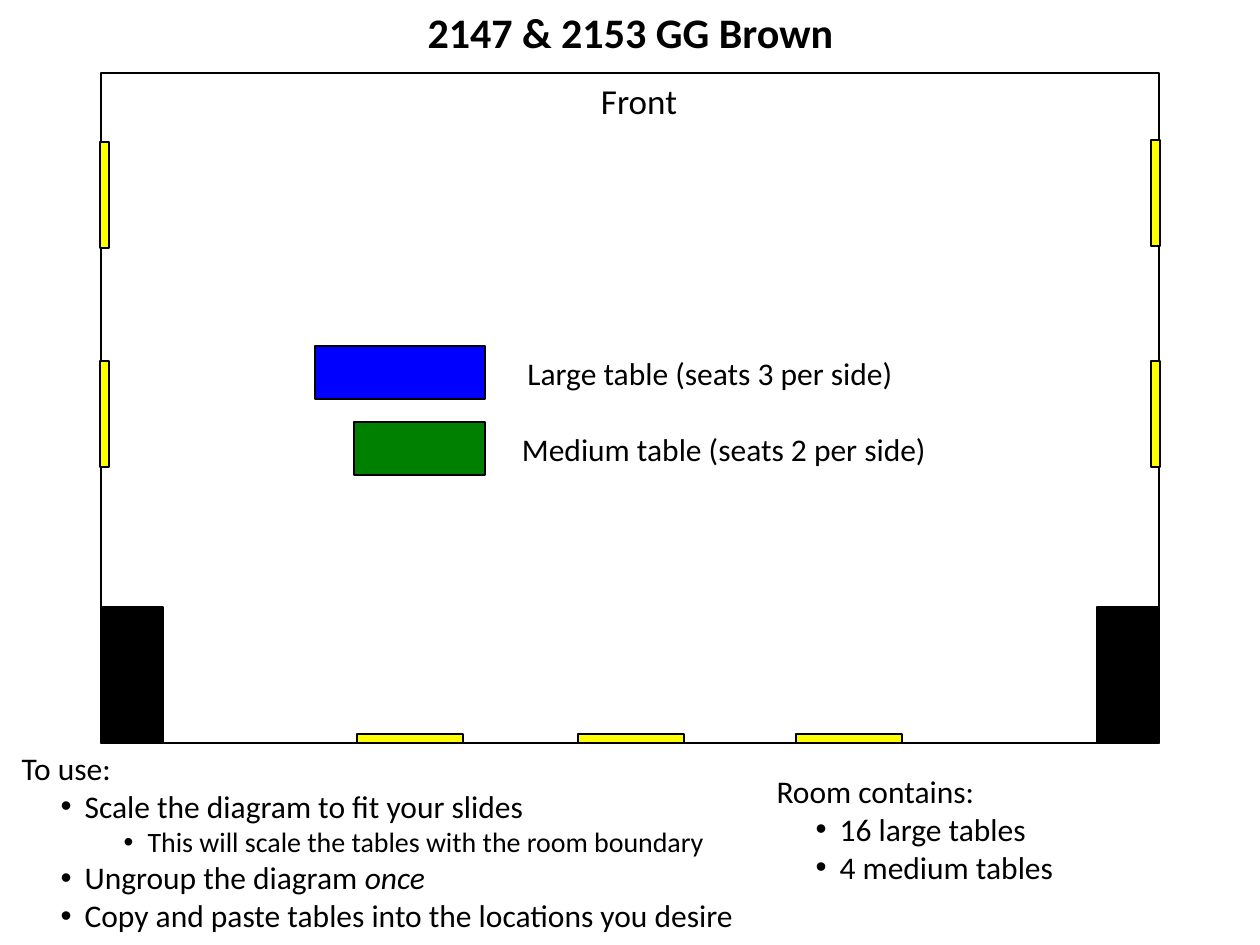
from dataclasses import dataclass

from lxml.etree import SubElement
from pptx import Presentation
from pptx.dml.color import RGBColor
from pptx.enum.shapes import MSO_SHAPE
from pptx.enum.text import MSO_ANCHOR, MSO_AUTO_SIZE, PP_ALIGN
from pptx.oxml.ns import qn
from pptx.util import Pt

SCALE = 914400 / 126


@dataclass(frozen=True)
class Theme:
    font: str = "Calibri"
    ink: str = "000000"
    window: str = "FFFF00"
    large_table: str = "0000FF"
    medium_table: str = "008000"
    title_size: int = 24
    front_size: int = 20
    text_size: int = 18
    detail_size: int = 16
    line_width: float = 0.75


THEME = Theme()


def px(length):
    return round(length * SCALE)


def place(box, left, top, width, height):
    values = {"left": left, "top": top, "width": width, "height": height}
    for name, value in values.items():
        setattr(box, name, px(value))


def format_frame(frame):
    values = {
        "word_wrap": True,
        "auto_size": MSO_AUTO_SIZE.NONE,
        "vertical_anchor": MSO_ANCHOR.TOP,
    }
    for name, value in values.items():
        setattr(frame, name, value)


def add_span(paragraph, text, size, **extra):
    span = paragraph.add_run()
    span.text = text
    values = {"name": THEME.font, "size": Pt(size), **extra}
    for name, value in values.items():
        setattr(span.font, name, value)
    span.font.color.rgb = RGBColor.from_string(THEME.ink)


def set_bullet(paragraph, level):
    properties = paragraph._p.get_or_add_pPr()
    if level is None:
        properties.set("marL", "0")
        properties.set("indent", "0")
        SubElement(properties, qn("a:buNone"))
        return
    paragraph.level = level
    properties.set("marL", str(px(63 * (level + 1))))
    properties.set("indent", str(px(-24)))
    SubElement(properties, qn("a:buFont")).set("typeface", "Arial")
    SubElement(properties, qn("a:buChar")).set("char", "•")


def fill_title(box, text, bounds):
    place(box, *bounds)
    format_frame(box.text_frame)
    paragraph = box.text_frame.paragraphs[0]
    paragraph.alignment = PP_ALIGN.CENTER
    add_span(paragraph, text, THEME.title_size, bold=True)


def fill_list(box, bounds, items):
    place(box, *bounds)
    frame = box.text_frame
    format_frame(frame)
    for index, (level, text, emphasis) in enumerate(items):
        paragraph = frame.add_paragraph() if index else frame.paragraphs[0]
        paragraph.space_before = Pt(0)
        set_bullet(paragraph, level)
        size = THEME.detail_size if level == 1 else THEME.text_size
        add_span(paragraph, text, size)
        if emphasis:
            add_span(paragraph, emphasis, size, italic=True)


def add_block(group, bounds, color=None):
    block = group.shapes.add_shape(MSO_SHAPE.RECTANGLE, *map(px, bounds))
    block.shadow.inherit = False
    if color:
        block.fill.solid()
        block.fill.fore_color.rgb = RGBColor.from_string(color)
    else:
        block.fill.background()
    block.line.color.rgb = RGBColor.from_string(THEME.ink)
    block.line.width = Pt(THEME.line_width)


def add_label(group, bounds, text, size):
    box = group.shapes.add_textbox(*map(px, bounds))
    format_frame(box.text_frame)
    paragraph = box.text_frame.paragraphs[0]
    paragraph.alignment = PP_ALIGN.CENTER
    add_span(paragraph, text, size)


def add_room(page):
    room = page.shapes.add_group_shape()
    add_block(room, (101, 73, 1058, 670))
    for left in (101, 1097):
        add_block(room, (left, 607, 62, 136), THEME.ink)
    for left, top in ((100, 142), (100, 361), (1151, 140), (1151, 361)):
        add_block(room, (left, top, 9, 106), THEME.window)
    for left in (357, 578, 796):
        add_block(room, (left, 734, 106, 9), THEME.window)
    add_label(room, (534, 73, 210, 55), "Front", THEME.front_size)

    tables = (
        (346, 170, THEME.large_table, 438, "Large table (seats 3 per side)"),
        (422, 131, THEME.medium_table, 466, "Medium table (seats 2 per side)"),
    )
    for top, width, color, label_width, text in tables:
        add_block(room, (485 - width, top, width, 53), color)
        add_label(room, (491, top + 2, label_width, 50), text, THEME.text_size)


def main():
    deck = Presentation()
    deck.slide_width, deck.slide_height = px(1260), px(945)
    page = deck.slides.add_slide(deck.slide_layouts[3])
    title, usage, contents = page.placeholders
    fill_title(title, "2147 & 2153 GG Brown", (412, 0, 437, 63))
    fill_list(usage, (9, 743, 823, 199), (
        (None, "To use:", None),
        (0, "Scale the diagram to fit your slides", None),
        (1, "This will scale the tables with the room boundary", None),
        (0, "Ungroup the diagram ", "once"),
        (0, "Copy and paste tables into the locations you desire", None),
    ))
    fill_list(contents, (764, 766, 372, 127), (
        (None, "Room contains:", None),
        (0, "16 large tables", None),
        (0, "4 medium tables", None),
    ))
    add_room(page)
    deck.save("out.pptx")


if __name__ == "__main__":
    main()
